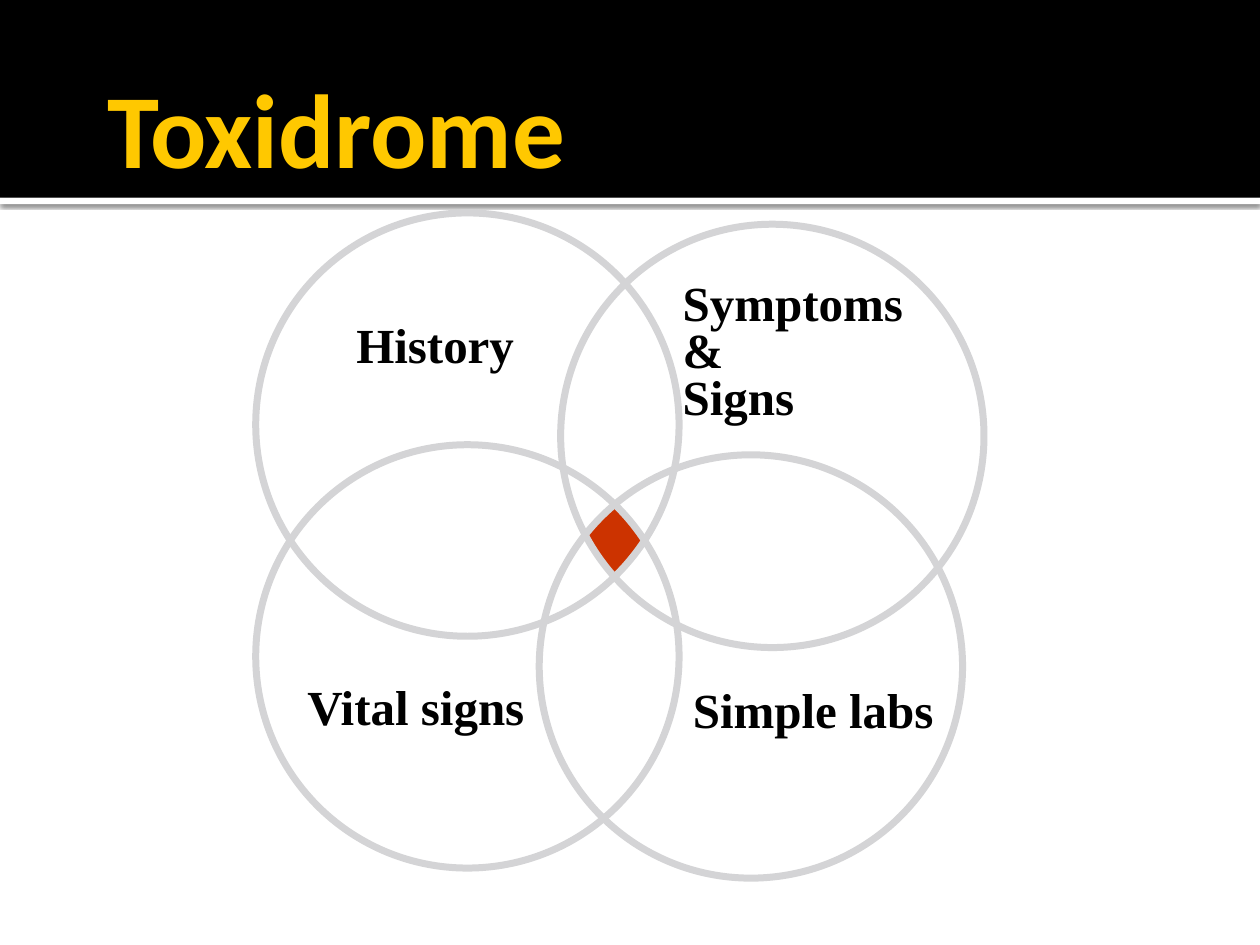
import lxml.etree
import pptx
import pptx.dml.color
import pptx.enum.shapes
import pptx.enum.text
import pptx.oxml.ns
import pptx.util

Inches = pptx.util.Inches
Pt = pptx.util.Pt
SHAPE = pptx.enum.shapes.MSO_SHAPE


def rgb(value):
    return pptx.dml.color.RGBColor.from_string(value)


def add_plain_shape(kind, left, top, width, height, fill=None):
    """Add a preset shape with no outline or shadow, unfilled unless given a fill."""
    shape = slide.shapes.add_shape(
        kind, Inches(left), Inches(top), Inches(width), Inches(height))
    shape.shadow.inherit = False
    shape.line.fill.background()
    if fill:
        shape.fill.solid()
        shape.fill.fore_color.rgb = rgb(fill)
    else:
        shape.fill.background()
    return shape


prs = pptx.Presentation()
prs.slide_width = Inches(10)
prs.slide_height = Inches(7.5)
slide = prs.slides.add_slide(prs.slide_layouts.get_by_name("Title Only"))
slide.background.fill.solid()
slide.background.fill.fore_color.rgb = rgb("FFFFFF")

# Header band with a white, shadowed edge
header_edge = add_plain_shape(SHAPE.RECTANGLE, 0, 1.57, 10, 0.05, "FFFFFF")
qn = pptx.oxml.ns.qn
edge_effects = header_edge.element.spPr.find(qn("a:effectLst"))
edge_shadow = lxml.etree.SubElement(
    edge_effects, qn("a:outerShdw"), blurRad=str(Pt(2.5)), dist=str(Pt(0.8)),
    dir="5400000", algn="t", rotWithShape="0")
shadow_color = lxml.etree.SubElement(edge_shadow, qn("a:srgbClr"), val="000000")
lxml.etree.SubElement(shadow_color, qn("a:alpha"), val="60000")
add_plain_shape(SHAPE.RECTANGLE, 0, 0, 10, 1.57, "000000")

# Shared core of the four circles
core_outline = slide.shapes.build_freeform(Inches(4.88), Inches(4))
core_outline.add_line_segments(
    [(Inches(x), Inches(y)) for x, y in [(4.62, 4.25), (4.88, 4.58), (5.12, 4.25)]],
    close=True)
core = core_outline.convert_to_shape()
core.shadow.inherit = False
core.fill.solid()
core.fill.fore_color.rgb = rgb("CC3300")
core.line.fill.background()

title = slide.shapes.title
title.left, title.top = Inches(0.75), Inches(0.5)
title.width, title.height = Inches(8.5), Inches(1)
title.text_frame.text = "Toxidrome"
title.text_frame.vertical_anchor = pptx.enum.text.MSO_ANCHOR.MIDDLE
heading = title.text_frame.paragraphs[0]
heading.alignment = pptx.enum.text.PP_ALIGN.LEFT
heading.font.name = "Calibri"
heading.font.size = Pt(60)
heading.font.bold = True
heading.font.color.rgb = rgb("FFC800")
# The title has to lie in front of the header band
title.element.getparent().append(title.element)

for left, top in [(2.03, 1.69), (2.03, 3.53), (4.28, 3.61), (4.45, 1.78)]:
    circle = add_plain_shape(SHAPE.OVAL, left, top, 3.36, 3.36)
    circle.line.color.rgb = rgb("D4D4D6")
    circle.line.width = Pt(4)

labels = [
    ("History", 2.73, 2.45, 1.47, 0.57, None),
    ("Vital signs", 2.34, 5.32, 1.98, 0.57, None),
    ("Symptoms\n&\nSigns", 5.32, 2.2, 2.04, 1.22, 0.8),
    ("Simple labs", 5.4, 5.34, 2.22, 0.57, None),
]
for text, left, top, width, height, line_spacing in labels:
    label = slide.shapes.add_textbox(
        Inches(left), Inches(top), Inches(width), Inches(height)).text_frame
    label.word_wrap = False
    label.auto_size = pptx.enum.text.MSO_AUTO_SIZE.SHAPE_TO_FIT_TEXT
    label.text = text
    for line in label.paragraphs:
        line.alignment = pptx.enum.text.PP_ALIGN.LEFT
        line.line_spacing = line_spacing
        line.font.name = "Times New Roman"
        line.font.size = Pt(28)
        line.font.bold = True
        line.font.color.rgb = rgb("000000")

prs.save("out.pptx")
